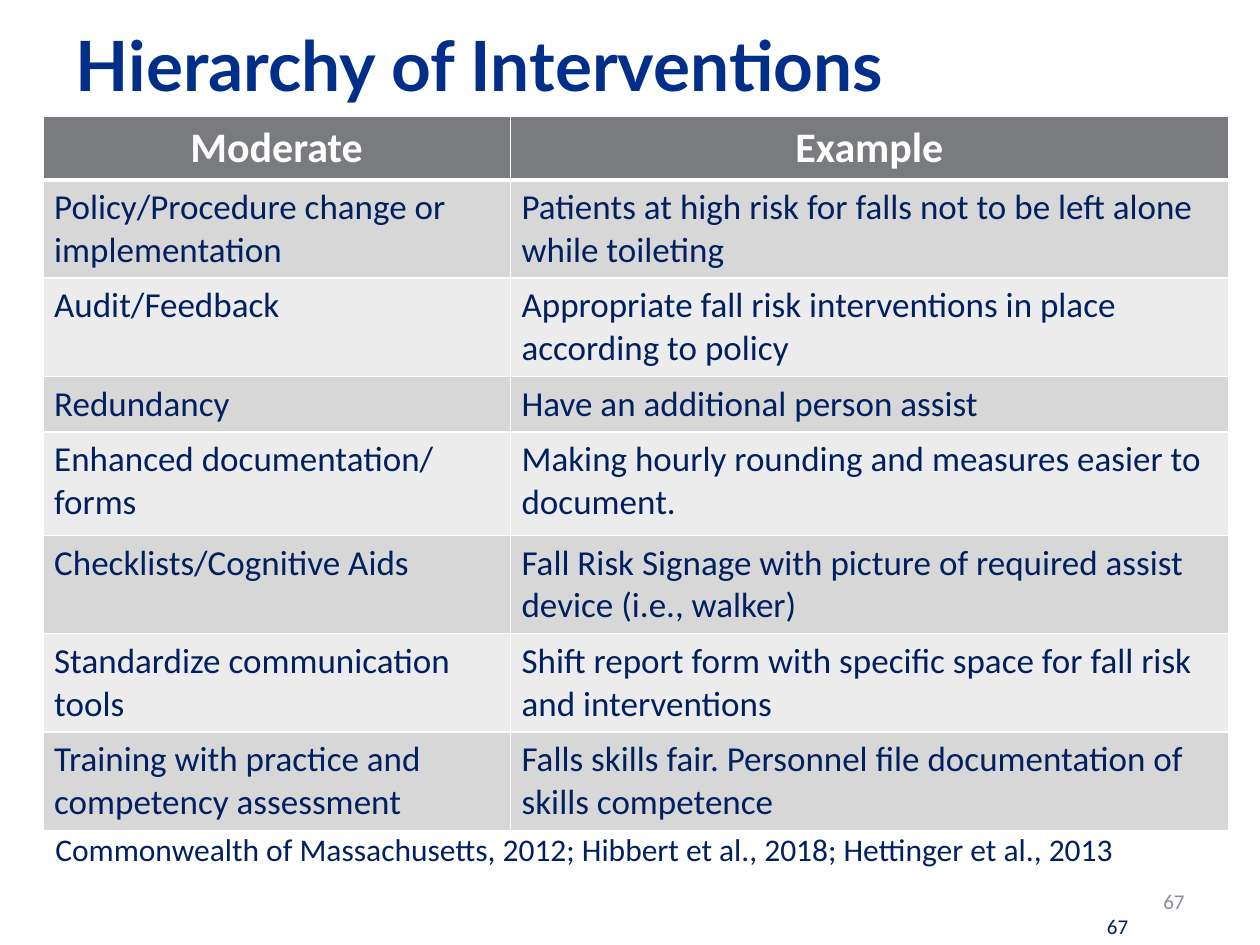
from lxml import etree
from pptx import Presentation
from pptx.dml.color import RGBColor
from pptx.enum.text import MSO_ANCHOR, MSO_AUTO_SIZE, PP_ALIGN
from pptx.oxml.ns import qn
from pptx.util import Inches, Pt

COLORS = {
    "title": "002E89", "text": "002060", "number": "8C8D9D", "white": "FFFFFF",
    "header": "797B7E", "odd": "D7D7D8", "even": "ECECEC",
}
ROWS = [
    ("Moderate", "Example"),
    ("Policy/Procedure change or implementation",
     "Patients at high risk for falls not to be left alone while toileting"),
    ("Audit/Feedback",
     "Appropriate fall risk interventions in place according to policy"),
    ("Redundancy", "Have an additional person assist"),
    ("Enhanced documentation/ forms",
     "Making hourly rounding and measures easier to document."),
    ("Checklists/Cognitive Aids",
     "Fall Risk Signage with picture of required assist device (i.e., walker)"),
    ("Standardize communication tools",
     "Shift report form with specific space for fall risk and interventions"),
    ("Training with practice and competency assessment",
     "Falls skills fair. Personnel file documentation of skills competence"),
]
COL_WIDTHS = [3.71, 5.7]
ROW_HEIGHTS = [0.47, 0.76, 0.76, 0.42, 0.82, 0.76, 0.76, 0.76]


def write(tf, text, size, color, font="Calibri", bold=False, align=PP_ALIGN.LEFT):
    tf.text = text
    p = tf.paragraphs[0]
    p.alignment = align
    f = p.runs[0].font
    f.name, f.size, f.bold = font, Pt(size), bold
    f.color.rgb = RGBColor.from_string(COLORS[color])


def add_borders(cell, bottom):
    """Draw white cell borders, 1 pt except for the given bottom width."""
    tc_pr = cell._tc.get_or_add_tcPr()
    for side, width in (("L", 1), ("R", 1), ("T", 1), ("B", bottom)):
        ln = etree.SubElement(tc_pr, qn(f"a:ln{side}"), w=str(Pt(width)))
        fill = etree.SubElement(ln, qn("a:solidFill"))
        etree.SubElement(fill, qn("a:srgbClr"), val=COLORS["white"])


prs = Presentation()
prs.slide_width, prs.slide_height = Inches(10), Inches(7.5)
s = prs.slides.add_slide(prs.slide_layouts[5])

title = s.shapes.title
title.left, title.top = Inches(0.5), Inches(0.17)
title.width, title.height = Inches(9), Inches(0.67)
write(title.text_frame, "Hierarchy of Interventions", 39.6, "title", "Lato", True)
title.text_frame.vertical_anchor = MSO_ANCHOR.MIDDLE
title.text_frame.auto_size = MSO_AUTO_SIZE.NONE

table = s.shapes.add_table(
    len(ROWS), len(COL_WIDTHS), Inches(0.34), Inches(0.92),
    Inches(sum(COL_WIDTHS)), Inches(sum(ROW_HEIGHTS))).table
for column, width in zip(table.columns, COL_WIDTHS):
    column.width = Inches(width)
for i, (row, height, texts) in enumerate(zip(table.rows, ROW_HEIGHTS, ROWS)):
    row.height = Inches(height)
    header = i == 0
    fill = "header" if header else "odd" if i % 2 else "even"
    for cell, text in zip(row.cells, texts):
        if header:
            write(cell.text_frame, text, 24, "white", bold=True, align=PP_ALIGN.CENTER)
        else:
            write(cell.text_frame, text, 20, "text")
        cell.margin_left = cell.margin_right = Inches(0.09)
        cell.margin_top = cell.margin_bottom = Inches(0.05)
        add_borders(cell, 3 if header else 1)
        cell.fill.solid()
        cell.fill.fore_color.rgb = RGBColor.from_string(COLORS[fill])

# Slide numbers
for left, top, width, height, color, align in [
    (8.58, 7.2, 0.58, 0.3, "text", PP_ALIGN.CENTER),
    (7.17, 6.95, 2.33, 0.4, "number", PP_ALIGN.RIGHT),
]:
    tf = s.shapes.add_textbox(
        Inches(left), Inches(top), Inches(width), Inches(height)).text_frame
    tf.word_wrap = True
    tf.vertical_anchor = MSO_ANCHOR.MIDDLE
    write(tf, "67", 12, color, align=align)

tf = s.shapes.add_textbox(
    Inches(0.34), Inches(6.54), Inches(8.71), Inches(0.4)).text_frame
tf.word_wrap = False
tf.auto_size = MSO_AUTO_SIZE.SHAPE_TO_FIT_TEXT
write(tf, "Commonwealth of Massachusetts, 2012; Hibbert et al., 2018; "
      "Hettinger et al., 2013", 18, "text")

prs.save("out.pptx")
